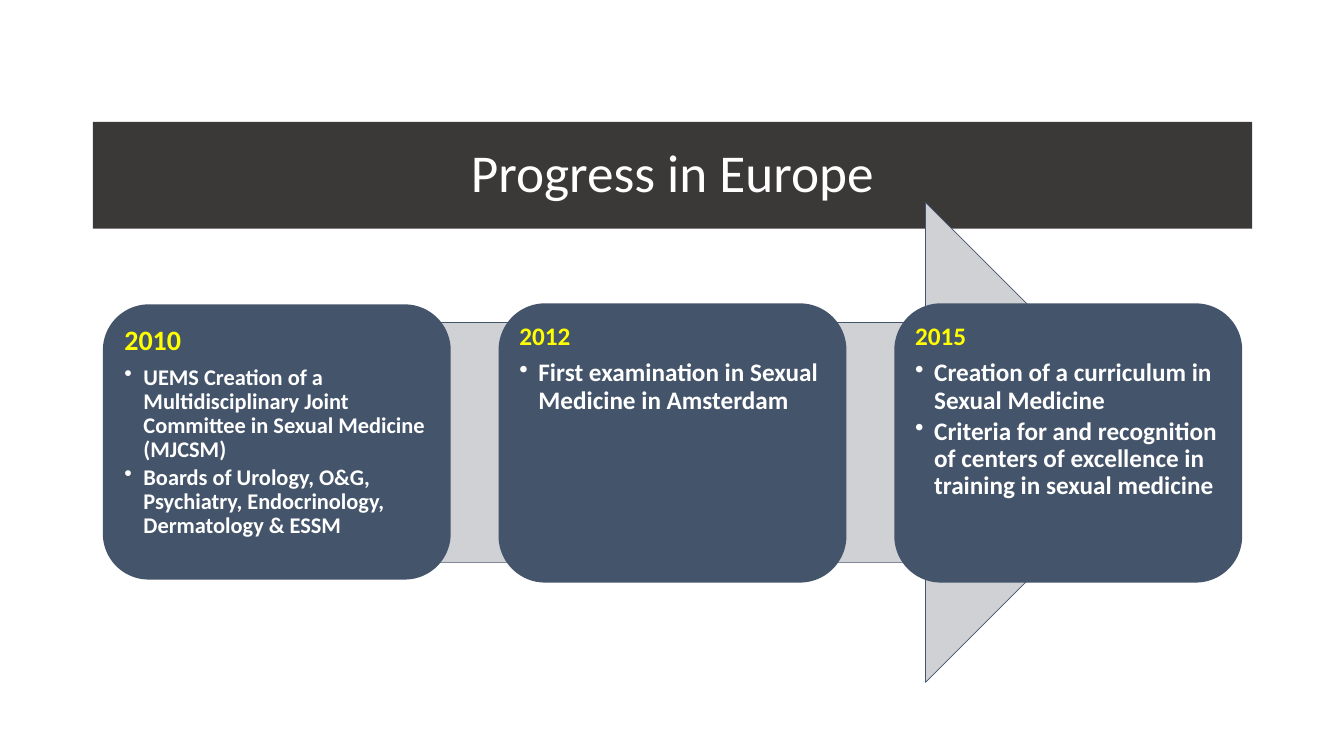
from lxml import etree
from pptx import Presentation
from pptx.dml.color import RGBColor
from pptx.enum.shapes import MSO_SHAPE
from pptx.enum.text import MSO_ANCHOR, PP_ALIGN
from pptx.oxml.ns import qn
from pptx.util import Inches, Pt

WHITE = RGBColor(0xFF, 0xFF, 0xFF)
YELLOW = RGBColor(0xFF, 0xFF, 0x00)
CHARCOAL = RGBColor(0x3B, 0x38, 0x38)
NAVY = RGBColor(0x44, 0x54, 0x6A)
GREY = RGBColor(0xCF, 0xD1, 0xD4)
ARROW, ROUND = MSO_SHAPE.RIGHT_ARROW, MSO_SHAPE.ROUNDED_RECTANGLE
TOP, MIDDLE = MSO_ANCHOR.TOP, MSO_ANCHOR.MIDDLE
LEFT, CENTER = PP_ALIGN.LEFT, PP_ALIGN.CENTER

# Cards: top, height, inset, year size, item size, year, items
CARDS = [
    (3.02, 2.73, 0.08, 20, 16, "2010", [
        "UEMS Creation of a Multidisciplinary Joint Committee in Sexual Medicine (MJCSM)",
        "Boards of Urology, O&G, Psychiatry, Endocrinology, Dermatology & ESSM"]),
    (3.01, 2.77, 0.07, 18, 18, "2012", [
        "First examination in Sexual Medicine in Amsterdam"]),
    (3.01, 2.77, 0.07, 18, 18, "2015", [
        "Creation of a curriculum in Sexual Medicine",
        "Criteria for and recognition of centers of excellence in training in sexual medicine"]),
]
START, STEP, WIDTH = 1.02, 3.925, 3.45


class Deck:
    font = "Calibri"

    def __init__(self, slide):
        self.slide = slide

    def style(self, para, size, color, bold=False, align=LEFT, after=0):
        para.alignment = align
        para.line_spacing = 0.9
        para.space_before = Pt(0)
        para.space_after = Pt(round(size * after, 1))
        font = para.font
        font.name, font.size, font.bold = self.font, Pt(size), bold
        font.color.rgb = color

    def title(self, text, box):
        shape = self.slide.shapes.title
        shape.left, shape.top, shape.width, shape.height = map(Inches, box)
        shape.fill.solid()
        shape.fill.fore_color.rgb = CHARCOAL
        shape.text_frame.text = text
        shape.text_frame.vertical_anchor = MIDDLE
        self.style(shape.text_frame.paragraphs[0], 38, WHITE, align=CENTER)

    def shape(self, kind, box, fill, line=None):
        shape = self.slide.shapes.add_shape(kind, *map(Inches, box))
        shape.shadow.inherit = False
        shape.fill.solid()
        shape.fill.fore_color.rgb = fill
        if line is None:
            shape.line.fill.background()
        else:
            shape.line.color.rgb = line
            shape.line.width = Pt(0.5)
        return shape

    def bullet(self, para):
        para.level = 1
        props = para._p.get_or_add_pPr()
        props.set("marL", str(Inches(0.19)))
        props.set("indent", str(-Inches(0.19)))
        etree.SubElement(props, qn("a:buChar")).set("char", "•")

    def card(self, box, inset, head, size, year, items):
        frame = self.shape(ROUND, box, NAVY).text_frame
        frame.word_wrap = True
        frame.vertical_anchor = TOP
        frame.margin_left = frame.margin_right = Inches(inset)
        frame.margin_top = frame.margin_bottom = Inches(inset)
        frame.text = year
        self.style(frame.paragraphs[0], head, YELLOW, True, after=0.35)
        for item in items:
            para = frame.add_paragraph()
            para.text = item
            self.bullet(para)
            self.style(para, size, WHITE, True, after=0.15)


def main():
    show = Presentation()
    show.slide_width, show.slide_height = Inches(13.33), Inches(7.5)
    deck = Deck(show.slides.add_slide(show.slide_layouts[5]))

    # Title band
    deck.title("Progress in Europe", (0.92, 1.21, 11.5, 1.06))

    # Arrow behind the timeline
    deck.shape(ARROW, (1.78, 2.01, 9.78, 4.76), GREY, NAVY)

    # Milestone cards
    for i, (top, height, inset, head, size, year, items) in enumerate(CARDS):
        box = (START + i * STEP, top, WIDTH, height)
        deck.card(box, inset, head, size, year, items)

    show.save("out.pptx")


if __name__ == "__main__":
    main()
